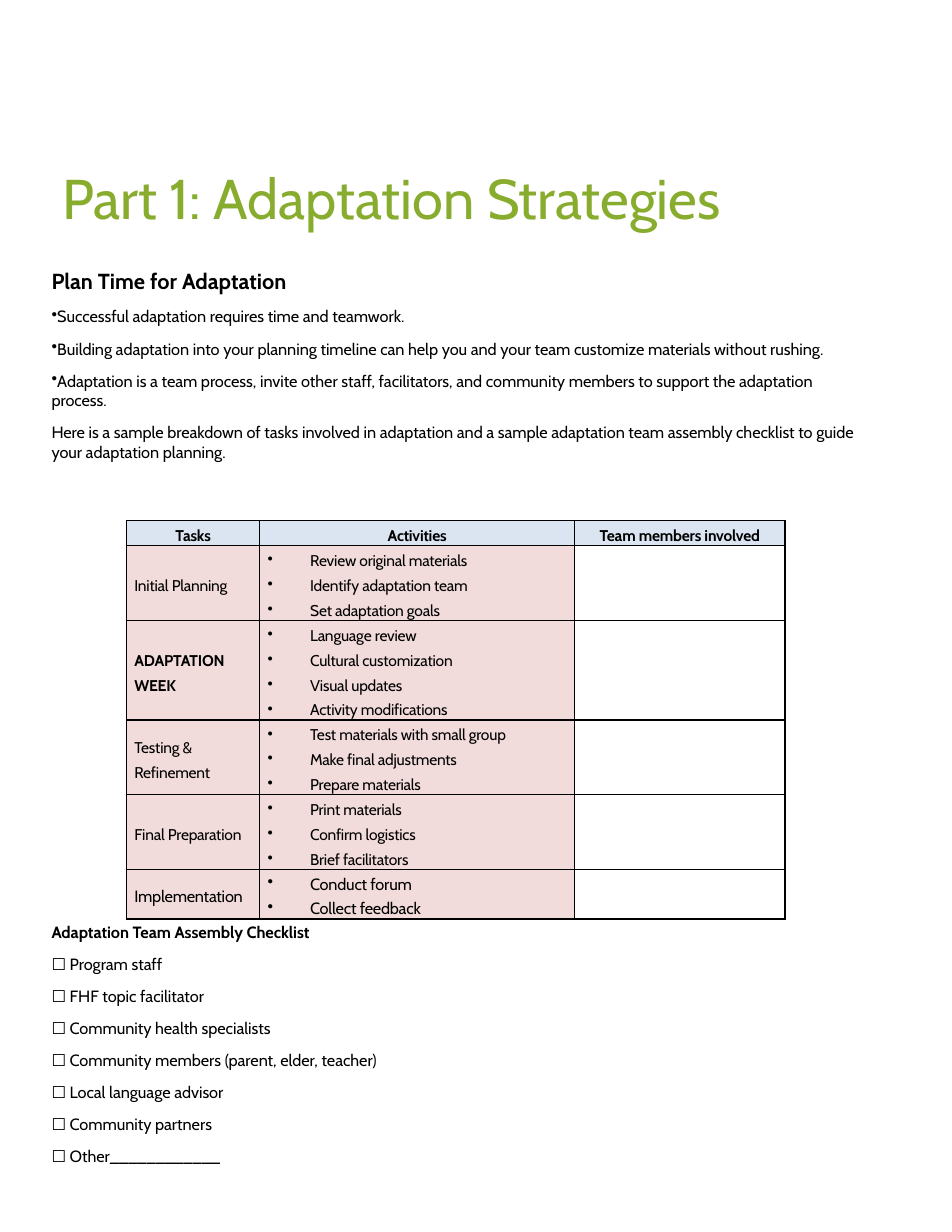
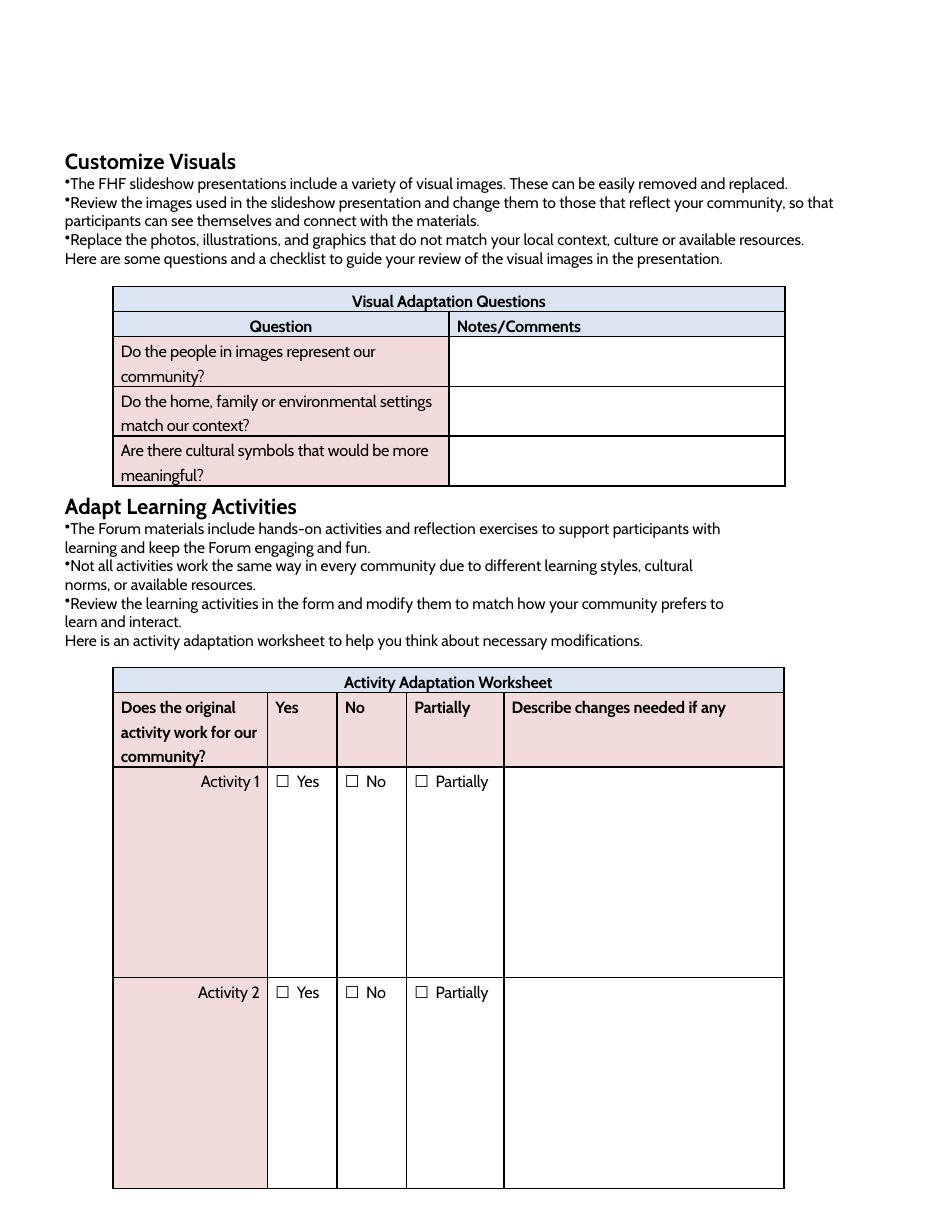
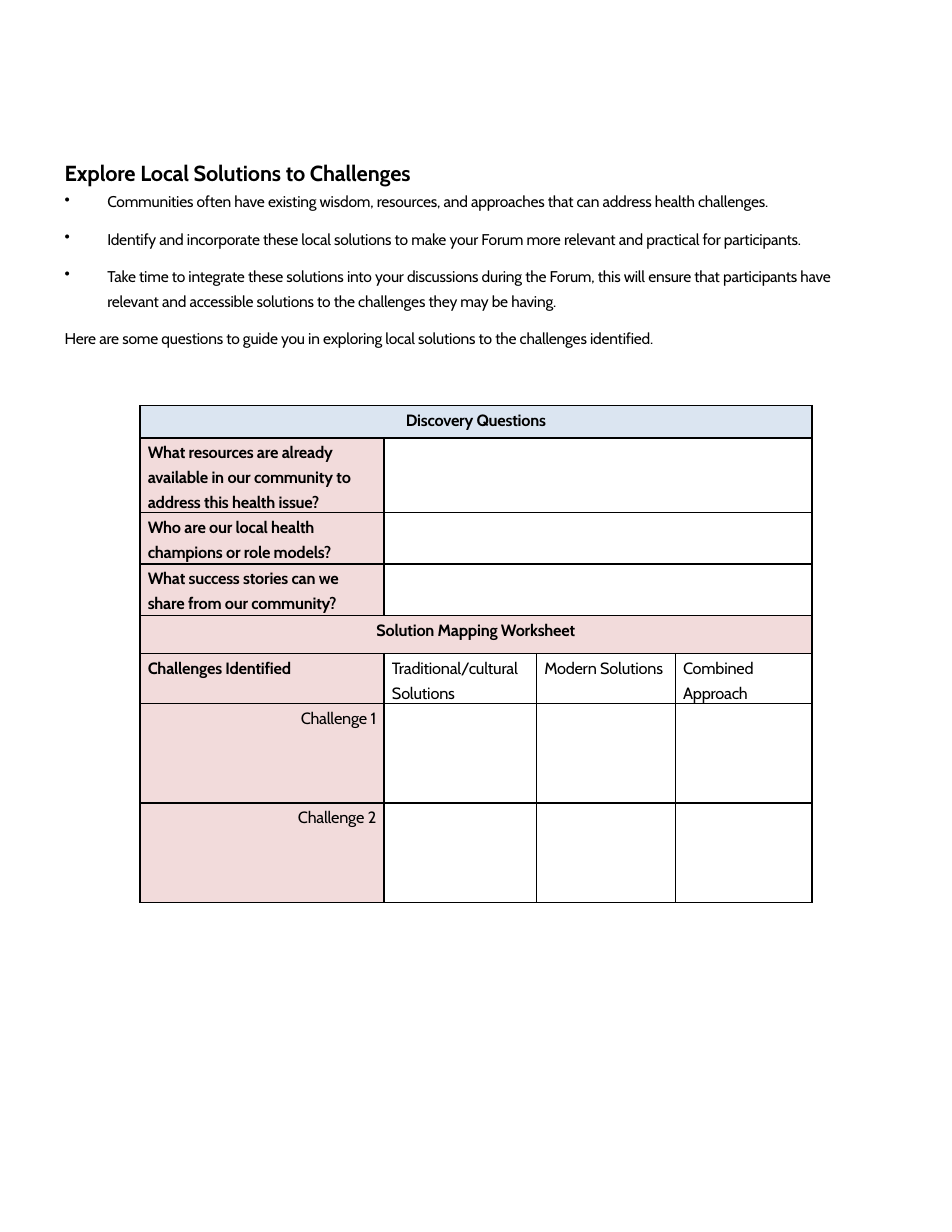
from dataclasses import dataclass
from typing import Any, NamedTuple

from lxml.etree import SubElement as Sub
from pptx import Presentation
from pptx.dml.color import RGBColor
from pptx.enum.text import MSO_ANCHOR as Anchor, PP_ALIGN as Align
from pptx.oxml.ns import qn
from pptx.util import Inches, Pt

# Shared look
FONT = "Cabin"
GREEN = RGBColor(0x88, 0xAC, 0x2E)
BLACK = RGBColor(0x00, 0x00, 0x00)
BLUE = RGBColor(0xDB, 0xE5, 0xF1)
PINK = RGBColor(0xF2, 0xDB, 0xDB)
LINE = 16 / 72  # height of one table line, in inches
BOX = dict(word_wrap=True, margin_left=0, margin_top=Inches(0.14),
           margin_right=0, margin_bottom=0)
CELL = dict(margin_left=Inches(0.07), margin_top=0,
            margin_right=Inches(0.07), margin_bottom=0)
FIXED = dict(line_spacing=Pt(16))
LOOSE = dict(space_after=Pt(8))


class Para(NamedTuple):
    text: str
    size: float = 10.5
    bold: bool = False
    bullet: bool = False
    indent: float = 0
    track: int = 0
    color: RGBColor = BLACK
    form: dict[str, Any] = {}


class Cell(NamedTuple):
    text: str = ""
    fill: RGBColor | None = None
    bold: bool = False
    align: Align = Align.LEFT
    span: int = 1
    size: float = 10.5
    bullet: bool = False


@dataclass
class Grid:
    left: float
    top: float
    cols: list[float]
    rows: list[float]
    cells: list[list[Cell]]
    anchor: Anchor = Anchor.TOP


def apply(item: Any, form: dict[str, Any]) -> None:
    for name, value in form.items():
        setattr(item, name, value)


def write(frame: Any, paras: list[Para]) -> None:
    for i, para in enumerate(paras):
        p = frame.add_paragraph() if i else frame.paragraphs[0]
        if para.bullet:
            props = p._p.get_or_add_pPr()
            props.set("marL", str(Inches(para.indent)))
            props.set("indent", str(-Inches(para.indent)))
            Sub(props, qn("a:buChar")).set("char", "•")
        apply(p, para.form)
        run = p.add_run()
        run.text = para.text
        apply(run.font, dict(name=FONT, size=Pt(para.size), bold=para.bold))
        run.font.color.rgb = para.color
        if para.track:
            run._r.get_or_add_rPr().set("spc", str(para.track))


def add_text(slide: Any, at: tuple[float, ...], paras: list[Para],
             form: dict[str, Any]) -> None:
    frame = slide.shapes.add_textbox(*map(Inches, at)).text_frame
    apply(frame, form)
    write(frame, paras)


def add_edge(cell: Any) -> None:
    props = cell._tc.get_or_add_tcPr()
    for side in "LRTB":
        line = Sub(props, qn(f"a:ln{side}"), w=str(Pt(1)))
        Sub(Sub(line, qn("a:solidFill")), qn("a:srgbClr"), val=str(BLACK))


def add_grid(slide: Any, grid: Grid) -> None:
    table = slide.shapes.add_table(
        len(grid.rows), len(grid.cols), Inches(grid.left), Inches(grid.top),
        Inches(sum(grid.cols)), Inches(sum(grid.rows))).table
    apply(table, dict(first_row=False, horz_banding=False))
    for col, width in zip(table.columns, grid.cols):
        col.width = Inches(width)
    for row, height in zip(table.rows, grid.rows):
        row.height = Inches(height)
    for cell in table.iter_cells():
        add_edge(cell)
        cell.fill.background()
        apply(cell, CELL | dict(vertical_anchor=grid.anchor))
    for r, row in enumerate(grid.cells):
        c = 0
        for item in row:
            cell = table.cell(r, c)
            if item.span > 1:
                cell.merge(table.cell(r, c + item.span - 1))
            if item.fill is not None:
                cell.fill.solid()
                cell.fill.fore_color.rgb = item.fill
            if item.text:
                form = FIXED | dict(alignment=item.align)
                write(cell.text_frame, [
                    Para(text, item.size, item.bold, item.bullet, 0.38, -10, form=form)
                    for text in item.text.split("\n")])
            c += item.span


def head(text: str, span: int = 1, fill: RGBColor = BLUE, size: float = 10.5) -> Cell:
    return Cell(text, fill, True, Align.CENTER, span, size)


def ask(text: str, bold: bool = True) -> Cell:
    return Cell(text, PINK, bold)


def label(text: str) -> Cell:
    return Cell(text, PINK, align=Align.RIGHT)


def task(name: str, *steps: str, bold: bool = False, size: float = 10) -> list[Cell]:
    return [Cell(name, PINK, bold, size=size),
            Cell("\n".join(steps), PINK, size=size, bullet=True), Cell()]


def notes(title: str, points: list[str], close: str, size: float = 10,
          indent: float = 0, track: int = 0, top: dict = {}, form: dict = {}) -> list[Para]:
    """Heading, bulleted points and a closing line."""
    return [Para(title, 14, True, track=track, form=top),
            *(Para(t, size, False, True, indent, track, form=form) for t in points),
            Para(close, size, track=track, form=form)]


# Slide 1: strategies
def add_plan(slide: Any) -> None:
    add_text(slide, (0.46, 1.37, 7.22, 0.75),
             [Para("Part 1: Adaptation Strategies", 36, color=GREEN,
                   form=dict(line_spacing=0.9))],
             dict(word_wrap=True, vertical_anchor=Anchor.BOTTOM))
    tasks = [
        task("Initial Planning", "Review original materials",
             "Identify adaptation team", "Set adaptation goals"),
        task("ADAPTATION WEEK", "Language review", "Cultural customization",
             "Visual updates", "Activity modifications", bold=True),
        task("Testing & Refinement", "Test materials with small group",
             "Make final adjustments", "Prepare materials"),
        task("Final Preparation", "Print materials", "Confirm logistics",
             "Brief facilitators"),
        task("Implementation", "Conduct forum", "Collect feedback", size=10.5),
    ]
    titles = ["Tasks", "Activities", "Team members involved"]
    add_grid(slide, Grid(
        1.13, 4.65, [1.19, 2.81, 1.88], [LINE * n for n in (1, 3, 4, 3, 3, 2)],
        [[head(t, size=10) for t in titles], *tasks], Anchor.MIDDLE))
    intro = notes("Plan Time for Adaptation", [
        "Successful adaptation requires time and teamwork.",
        "Building adaptation into your planning timeline can help you and your team "
        "customize materials without rushing.",
        "Adaptation is a team process, invite other staff, facilitators, and community "
        "members to support the adaptation process.",
    ], "Here is a sample breakdown of tasks involved in adaptation and a sample adaptation "
       "team assembly checklist to guide your adaptation planning.",
        10.5, top=LOOSE, form=LOOSE)
    team = ["Program staff", "FHF topic facilitator", "Community health specialists",
            "Community members (parent, elder, teacher)", "Local language advisor",
            "Community partners", "Other____________"]
    # The space before the checklist leaves room for the table
    checks = [Para("Adaptation Team Assembly Checklist", bold=True,
                   form=LOOSE | dict(space_before=Pt(288))),
              *(Para(f"☐ {who}", form=LOOSE) for who in team)]
    add_text(slide, (0.46, 2.12, 7.22, 8.42), intro + checks,
             BOX | dict(vertical_anchor=Anchor.MIDDLE))


# Slide 2: visuals and activities
def add_views(slide: Any) -> None:
    asks = ["Do the people in images represent our community?",
            "Do the home, family or environmental settings match our context?",
            "Are there cultural symbols that would be more meaningful?"]
    add_grid(slide, Grid(
        1.01, 2.56, [3, 3], [LINE * n for n in (1, 1, 2, 2, 2)],
        [[head("Visual Adaptation Questions", 2)],
         [head("Question"), Cell("Notes/Comments", BLUE, True)],
         *([ask(t, False), Cell()] for t in asks)]))
    add_text(slide, (0.58, 1.18, 7.35, 1.52), notes("Customize Visuals", [
        "The FHF slideshow presentations include a variety of visual images. These can be "
        "easily removed and replaced.",
        "Review the images used in the slideshow presentation and change them to those that "
        "reflect your community, so that participants can see themselves and connect with "
        "the materials.",
        "Replace the photos, illustrations, and graphics that do not match your local "
        "context, culture or available resources.",
    ], "Here are some questions and a checklist to guide your review of the visual images "
       "in the presentation."), BOX)

    picks = ["Yes", "No", "Partially"]
    add_grid(slide, Grid(
        1.01, 5.96, [1.38, 0.62, 0.62, 0.87, 2.5], [LINE, LINE * 3, 1.88, 1.88],
        [[head("Activity Adaptation Worksheet", 5)],
         [ask(t) for t in ("Does the original activity work for our community?",
                           *picks, "Describe changes needed if any")],
         *([label(f"Activity {n}"), *(Cell(f"☐  {t}") for t in picks), Cell()]
           for n in (1, 2))]))
    add_text(slide, (0.58, 4.26, 5.97, 1.55), notes("Adapt Learning Activities", [
        "The Forum materials include hands-on activities and reflection exercises to "
        "support participants with learning and keep the Forum engaging and fun.",
        "Not all activities work the same way in every community due to different learning "
        "styles, cultural norms, or available resources.",
        "Review the learning activities in the form and modify them to match how your "
        "community prefers to learn and interact.",
    ], "Here is an activity adaptation worksheet to help you think about necessary "
       "modifications."), BOX)


# Slide 3: local solutions
def add_local(slide: Any) -> None:
    add_text(slide, (0.48, 1.39, 7.23, 1.98), notes("Explore Local Solutions to Challenges", [
        "Communities often have existing wisdom, resources, and approaches that can address "
        "health challenges.",
        "Identify and incorporate these local solutions to make your Forum more relevant "
        "and practical for participants.",
        "Take time to integrate these solutions into your discussions during the Forum, "
        "this will ensure that participants have relevant and accessible solutions to the "
        "challenges they may be having.",
    ], "Here are some questions to guide you in exploring local solutions to the challenges "
       "identified.", indent=0.38, track=-10, top=FIXED, form=FIXED | LOOSE),
        dict(word_wrap=True))
    asks = ["What resources are already available in our community to address this health issue?",
            "Who are our local health champions or role models?",
            "What success stories can we share from our community?"]
    kinds = ["Traditional/cultural Solutions", "Modern Solutions", "Combined Approach"]
    add_grid(slide, Grid(
        1.25, 3.62, [2.18, 1.36, 1.24, 1.22],
        [0.29, LINE * 3, 0.46, 0.46, 0.34, LINE * 2, LINE * 4, LINE * 4],
        [[head("Discovery Questions", 4)],
         *([ask(t), Cell(span=3)] for t in asks),
         [head("Solution Mapping Worksheet", 4, PINK)],
         [ask("Challenges Identified"), *map(Cell, kinds)],
         *([label(f"Challenge {n}")] for n in (1, 2))]))


def main() -> None:
    deck = Presentation()
    apply(deck, dict(slide_width=Inches(8.5), slide_height=Inches(11)))
    for fill in (add_plan, add_views, add_local):
        fill(deck.slides.add_slide(deck.slide_layouts[6]))
    deck.save("out.pptx")


if __name__ == "__main__":
    main()
